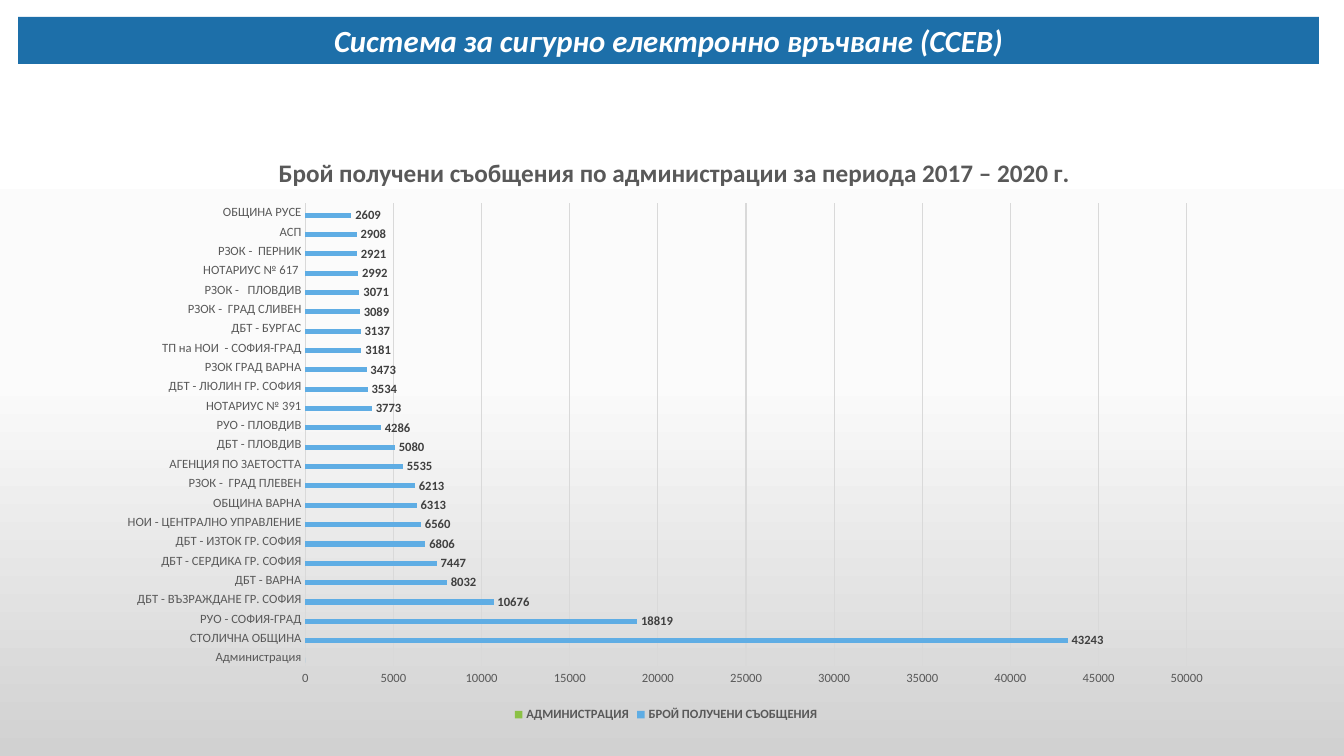
from copy import deepcopy
from dataclasses import dataclass

from lxml.etree import SubElement
from pptx import Presentation
from pptx.chart.data import CategoryChartData
from pptx.dml.color import RGBColor
from pptx.enum.chart import XL_CHART_TYPE, XL_LABEL_POSITION, XL_LEGEND_POSITION, XL_TICK_MARK
from pptx.enum.shapes import MSO_SHAPE
from pptx.enum.text import MSO_ANCHOR, PP_ALIGN
from pptx.oxml.ns import qn
from pptx.util import Pt

SCALE = 12192000 / 1344
GREY, GRID = "595959", "D9D9D9"


@dataclass
class Box:
    left: int
    top: int
    width: int
    height: int

    def emu(self) -> list[int]:
        return [round(n * SCALE) for n in (self.left, self.top, self.width, self.height)]


@dataclass
class Count:
    office: str
    value: int


@dataclass
class Style:
    size: int
    color: str
    bold: bool = False
    italic: bool = False


BANNER = Box(18, 17, 1301, 47)
CHART = Box(106, 127, 1120, 599)
COUNTS = [
    Count("Администрация", 0),
    Count("СТОЛИЧНА ОБЩИНА", 43243),
    Count("РУО - СОФИЯ-ГРАД", 18819),
    Count("ДБТ - ВЪЗРАЖДАНЕ ГР. СОФИЯ", 10676),
    Count("ДБТ - ВАРНА", 8032),
    Count("ДБТ - СЕРДИКА ГР. СОФИЯ", 7447),
    Count("ДБТ - ИЗТОК ГР. СОФИЯ", 6806),
    Count("НОИ - ЦЕНТРАЛНО УПРАВЛЕНИЕ", 6560),
    Count("ОБЩИНА ВАРНА", 6313),
    Count("РЗОК -  ГРАД ПЛЕВЕН", 6213),
    Count("АГЕНЦИЯ ПО ЗАЕТОСТТА", 5535),
    Count("ДБТ - ПЛОВДИВ", 5080),
    Count("РУО - ПЛОВДИВ", 4286),
    Count("НОТАРИУС № 391", 3773),
    Count("ДБТ - ЛЮЛИН ГР. СОФИЯ", 3534),
    Count("РЗОК ГРАД ВАРНА", 3473),
    Count("ТП на НОИ  - СОФИЯ-ГРАД", 3181),
    Count("ДБТ - БУРГАС", 3137),
    Count("РЗОК -  ГРАД СЛИВЕН", 3089),
    Count("РЗОК -   ПЛОВДИВ", 3071),
    Count("НОТАРИУС № 617 ", 2992),
    Count("РЗОК -  ПЕРНИК", 2921),
    Count("АСП", 2908),
    Count("ОБЩИНА РУСЕ", 2609),
]


def paint(fill, color: str) -> None:
    fill.solid()
    fill.fore_color.rgb = RGBColor.from_string(color)


def assign(target, values: dict) -> None:
    for name, value in values.items():
        setattr(target, name, value)


def format_font(font, style: Style) -> None:
    assign(font, {"name": "Calibri", "size": Pt(style.size),
                  "bold": style.bold, "italic": style.italic})
    font.color.rgb = RGBColor.from_string(style.color)


def place(parent, values: dict) -> None:
    """Set a manual layout, in fractions of the chart area."""
    layout = parent.find(qn("c:layout"))
    if layout is None:
        layout = parent.makeelement(qn("c:layout"))
        text = parent.find(qn("c:tx"))
        parent.insert(0 if text is None else 1, layout)
    manual = SubElement(layout, qn("c:manualLayout"))
    for name, value in values.items():
        SubElement(manual, qn(f"c:{name}")).set("val", str(value))


def shade(slide) -> None:
    fill = slide.background.fill
    fill.gradient()
    fill.gradient_angle = 270
    first = fill.gradient_stops[0]
    first.color.rgb = RGBColor.from_string("FFFFFF")
    stops = slide.background.fill._fill._gradFill.gsLst
    stops.insert(1, deepcopy(stops[0]))
    colors = ("FFFFFF", "FBFBFB", "D1D1D1")
    for index, (stop, color) in enumerate(zip(fill.gradient_stops, colors)):
        stop.position = index / 2
        stop.color.rgb = RGBColor.from_string(color)


def add_banner(slide) -> None:
    shape = slide.shapes.add_shape(MSO_SHAPE.RECTANGLE, *BANNER.emu())
    shape.shadow.inherit = False
    paint(shape.fill, "1D6FA9")
    shape.line.fill.background()
    frame = shape.text_frame
    assign(frame, {"word_wrap": True, "vertical_anchor": MSO_ANCHOR.MIDDLE})
    line = frame.paragraphs[0]
    line.alignment = PP_ALIGN.CENTER
    run = line.add_run()
    run.text = "Система за сигурно електронно връчване (ССЕВ)"
    format_font(run.font, Style(22, "FFFFFF", True, True))


def add_bars(slide) -> None:
    data = CategoryChartData()
    data.categories = [count.office for count in COUNTS]
    data.add_series("БРОЙ ПОЛУЧЕНИ СЪОБЩЕНИЯ", [count.value for count in COUNTS])
    data.add_series("АДМИНИСТРАЦИЯ", [None] * len(COUNTS))
    chart = slide.shapes.add_chart(XL_CHART_TYPE.BAR_CLUSTERED, *CHART.emu(), data).chart
    format_font(chart.font, Style(10, "000000"))

    title = chart.chart_title
    run = title.text_frame.paragraphs[0].add_run()
    run.text = "Брой получени съобщения по администрации за периода 2017 – 2020 г."
    format_font(run.font, Style(18, GREY, True))
    place(title._element, {"xMode": "edge", "yMode": "edge", "x": 0.15, "y": 0.04})
    place(chart._chartSpace.chart.plotArea,
          {"layoutTarget": "inner", "xMode": "edge", "yMode": "edge",
           "x": 0.178, "y": 0.127, "w": 0.787, "h": 0.775})

    plot = chart.plots[0]
    assign(plot, {"gap_width": 182, "overlap": 0, "vary_by_categories": False})
    for series, color in zip(plot.series, ("5FADE4", "8BC145")):
        paint(series.format.fill, color)
    labels = plot.series[0].data_labels
    assign(labels, {"show_value": True, "position": XL_LABEL_POSITION.OUTSIDE_END,
                    "number_format": "#", "number_format_is_linked": False})
    format_font(labels.font, Style(9, "404040", True))

    for axis in (chart.category_axis, chart.value_axis):
        assign(axis, {"major_tick_mark": XL_TICK_MARK.NONE,
                      "minor_tick_mark": XL_TICK_MARK.NONE})
        format_font(axis.tick_labels.font, Style(9, GREY))
    assign(chart.value_axis, {"minimum_scale": 0, "maximum_scale": 50000, "major_unit": 5000})
    chart.value_axis.format.line.fill.background()
    for line in (chart.category_axis.format.line, chart.value_axis.major_gridlines.format.line):
        paint(line.fill, GRID)
        line.width = Pt(0.75)

    chart.has_legend = True
    assign(chart.legend, {"position": XL_LEGEND_POSITION.BOTTOM, "include_in_layout": False})
    format_font(chart.legend.font, Style(9, GREY, True))


def main() -> None:
    deck = Presentation()
    assign(deck, {"slide_width": round(1344 * SCALE), "slide_height": round(756 * SCALE)})
    slide = deck.slides.add_slide(deck.slide_layouts[6])
    shade(slide)
    add_banner(slide)
    add_bars(slide)
    deck.save("out.pptx")


if __name__ == "__main__":
    main()
